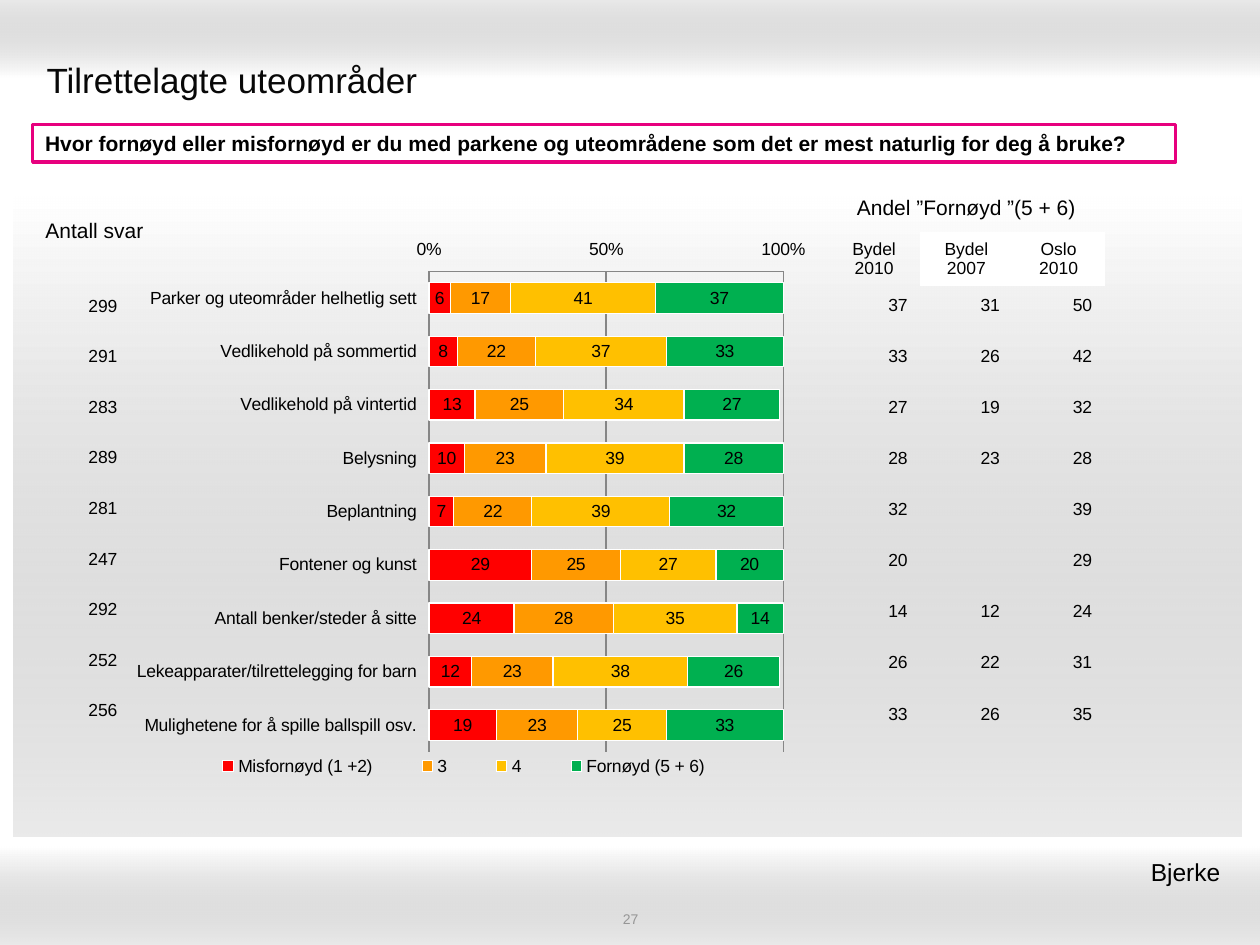
import lxml.etree
import pptx
import pptx.chart.data
import pptx.dml.color
import pptx.enum.chart
import pptx.enum.shapes
import pptx.enum.text
import pptx.oxml.ns
import pptx.util

Cm = pptx.util.Cm
Pt = pptx.util.Pt
qn = pptx.oxml.ns.qn
RGB = pptx.dml.color.RGBColor.from_string
ALIGN = pptx.enum.text.PP_ALIGN
MIDDLE = pptx.enum.text.MSO_ANCHOR.MIDDLE
PLAIN = "{2D5ABB26-0587-4C30-8999-92F81FD0307C}"

THEME = {
    "font": "Arial",
    "ink": RGB("000000"), "head": RGB("080808"), "pale": RGB("969696"),
    "white": RGB("FFFFFF"), "shade": RGB("999999"), "pink": RGB("E7007E"),
    "rule": RGB("868686"),
    "bars": [RGB(c) for c in ("FF0000", "FF9900", "FFC000", "00B050")],
    "title": Pt(20), "place": Pt(14), "lead": Pt(12), "body": Pt(10), "foot": Pt(8),
}


def write(frame, text, size="body", align=ALIGN.LEFT, ink="ink", bold=False):
    """Fill a text frame, one paragraph a line."""
    frame.word_wrap = True
    frame.vertical_anchor = MIDDLE
    form = {"name": THEME["font"], "size": THEME[size], "bold": bold}
    for num, line in enumerate(text.split("\n")):
        para = frame.paragraphs[0] if num == 0 else frame.add_paragraph()
        para.alignment = align
        if line:
            run = para.add_run()
            run.text = line
            for key, val in form.items():
                setattr(run.font, key, val)
            run.font.color.rgb = THEME[ink]


def grid(rows, left, top, wide, highs, size="body", align=ALIGN.RIGHT):
    """Add a table without style or fill."""
    count = len(rows[0])
    frame = slide.shapes.add_table(len(rows), count, Cm(left), Cm(top),
                                   Cm(wide * count), Cm(sum(highs)))
    table = frame.table
    table.first_row = table.horz_banding = False
    table._tbl.tblPr.find(qn("a:tableStyleId")).text = PLAIN
    for col in table.columns:
        col.width = Cm(wide)
    for r, (row, high) in enumerate(zip(rows, highs)):
        table.rows[r].height = Cm(high)
        for c, text in enumerate(row):
            cell = table.cell(r, c)
            cell.fill.background()
            cell.vertical_anchor = MIDDLE
            if text:
                write(cell.text_frame, text, size, align)
                cell.text_frame.word_wrap = None
    return table


deck = pptx.Presentation()
deck.slide_width, deck.slide_height = Cm(25.4), Cm(19.05)
slide = deck.slides.add_slide(deck.slide_layouts[6])
RECT = pptx.enum.shapes.MSO_SHAPE.RECTANGLE

# Shaded bands and panel
bands = [(0, 0, 25.4, 1.57, 90), (0, 17.07, 25.4, 1.98, 270),
         (0.28, 3.96, 24.74, 12.9, 270)]
for *box, angle in bands:
    band = slide.shapes.add_shape(RECT, *map(Cm, box))
    band.shadow.inherit = False
    band.line.fill.background()
    band.fill.gradient()
    band.fill.gradient_angle = angle
    for stop, tone, spot in zip(band.fill.gradient_stops, ("white", "shade"), (0, 1)):
        stop.color.rgb = THEME[tone]
        stop.position = spot
    tint = list(band._element.spPr.iter(qn("a:srgbClr")))[-1]
    lxml.etree.SubElement(tint, qn("a:alpha"), val="20000")

# Title, page number and district
notes = [
    ("Tilrettelagte uteområder", (0.69, 0.91, 24, 1.4), "title", ALIGN.LEFT, "head"),
    ("27", (8.69, 18.34, 8.05, 0.36), "foot", ALIGN.CENTER, "pale"),
    ("Bjerke ", (15.49, 17.15, 9.5, 0.86), "place", ALIGN.RIGHT, "ink"),
]
for text, box, size, align, ink in notes:
    note = slide.shapes.add_textbox(*map(Cm, box))
    write(note.text_frame, text, size, align, ink)

# Question box
quest = slide.shapes.add_shape(RECT, Cm(0.66), Cm(2.51), Cm(23.04), Cm(0.76))
quest.shadow.inherit = False
quest.fill.solid()
quest.fill.fore_color.rgb = THEME["white"]
quest.line.color.rgb = THEME["pink"]
quest.line.width = Pt(2)
write(quest.text_frame, "Hvor fornøyd eller misfornøyd er du med parkene og uteområdene "
      "som det er mest naturlig for deg å bruke?", "lead", bold=True)

# Stacked bars
data = pptx.chart.data.CategoryChartData()
data.categories = [
    "Parker og uteområder helhetlig sett", "Vedlikehold på sommertid",
    "Vedlikehold på vintertid", "Belysning", "Beplantning", "Fontener og kunst",
    "Antall benker/steder å sitte", "Lekeapparater/tilrettelegging for barn",
    "Mulighetene for å spille ballspill osv."]
data.add_series("Misfornøyd (1 +2)", (6, 8, 13, 10, 7, 29, 24, 12, 19))
data.add_series("3", (17, 22, 25, 23, 22, 25, 28, 23, 23))
data.add_series("4", (41, 37, 34, 39, 39, 27, 35, 38, 25))
data.add_series("Fornøyd (5 + 6)", (37, 33, 27, 28, 32, 20, 14, 26, 33))
kinds = pptx.enum.chart
chart = slide.shapes.add_chart(kinds.XL_CHART_TYPE.BAR_STACKED, Cm(2.49), Cm(4.55),
                               Cm(14), Cm(11.53), data).chart
chart.has_title = False
chart.has_legend = True
chart.legend.position = kinds.XL_LEGEND_POSITION.BOTTOM
chart.legend.include_in_layout = False
for key, val in {"name": THEME["font"], "size": THEME["body"]}.items():
    setattr(chart.font, key, val)
chart.font.color.rgb = THEME["ink"]

plot = chart.plots[0]
for key, val in {"gap_width": 75, "overlap": 100, "vary_by_categories": False}.items():
    setattr(plot, key, val)
for bar, tone in zip(plot.series, THEME["bars"]):
    bar.format.fill.solid()
    bar.format.fill.fore_color.rgb = tone
    bar.format.line.color.rgb = THEME["white"]
    bar.format.line.width = Pt(0.75)
    form = {"show_value": True, "number_format": "0", "number_format_is_linked": False,
            "position": kinds.XL_LABEL_POSITION.CENTER}
    for key, val in form.items():
        setattr(bar.data_labels, key, val)

# Axes
low, tick = kinds.XL_TICK_LABEL_POSITION.LOW, kinds.XL_TICK_MARK
axes = [
    (chart.category_axis, {"reverse_order": True, "major_tick_mark": tick.NONE}),
    (chart.value_axis, {"minimum_scale": 0, "maximum_scale": 100, "major_unit": 50,
                        "has_major_gridlines": True, "major_tick_mark": tick.INSIDE}),
]
for axis, form in axes:
    for key, val in form.items():
        setattr(axis, key, val)
    axis.minor_tick_mark = tick.NONE
    axis.tick_label_position = low
    axis.format.line.color.rgb = THEME["rule"]
marks = chart.value_axis.tick_labels
marks.number_format = "General\\%"
marks.number_format_is_linked = False
chart.value_axis.major_gridlines.format.line.color.rgb = THEME["rule"]

# Fixed places for plot and legend
area = chart._chartSpace.chart.plotArea
key_box = chart.legend._element
for part, index, box in ((area, 0, (0.44, 0.08, 0.51, 0.84)),
                         (key_box, 1, (0.08, 0.92, 0.82, 0.05))):
    for old in part.findall(qn("c:layout")):
        part.remove(old)
    layout = lxml.etree.Element(qn("c:layout"))
    manual = lxml.etree.SubElement(layout, qn("c:manualLayout"))
    if part is area:
        lxml.etree.SubElement(manual, qn("c:layoutTarget"), val="inner")
    for name in ("xMode", "yMode"):
        lxml.etree.SubElement(manual, qn("c:" + name), val="edge")
    for name, val in zip("xywh", box):
        lxml.etree.SubElement(manual, qn("c:" + name), val=str(val))
    part.insert(index, layout)

# Share of satisfied
shares = ["37 31 50", "33 26 42", "27 19 32", "28 23 28", "32 - 39", "20 - 29",
          "14 12 24", "26 22 31", "33 26 35"]
grid([row.replace("-", "").split(" ") for row in shares], 16.69, 5.64, 1.86, [1.03] * 9)
heads = grid([["Andel ”Fornøyd ”(5 + 6)", "", ""], ["Bydel\n2010", "Bydel\n2007", "Oslo\n2010"]],
             16.69, 3.73, 1.86, [0.94, 1.1], align=ALIGN.CENTER)
heads.cell(0, 0).merge(heads.cell(0, 2))
heads.cell(0, 0).text_frame.paragraphs[0].runs[0].font.size = THEME["lead"]
for col in (1, 2):
    fill = heads.cell(1, col).fill
    fill.solid()
    fill.fore_color.rgb = THEME["white"]

# Number of answers
counts = (299, 291, 283, 289, 281, 247, 292, 252, 256)
grid([[str(num)] for num in counts], 1.3, 5.66, 1.32, [1.02] * 9)
grid([["Antall svar"]], 0.1, 3.91, 3.61, [1.5], "lead", ALIGN.CENTER)

deck.save("out.pptx")
